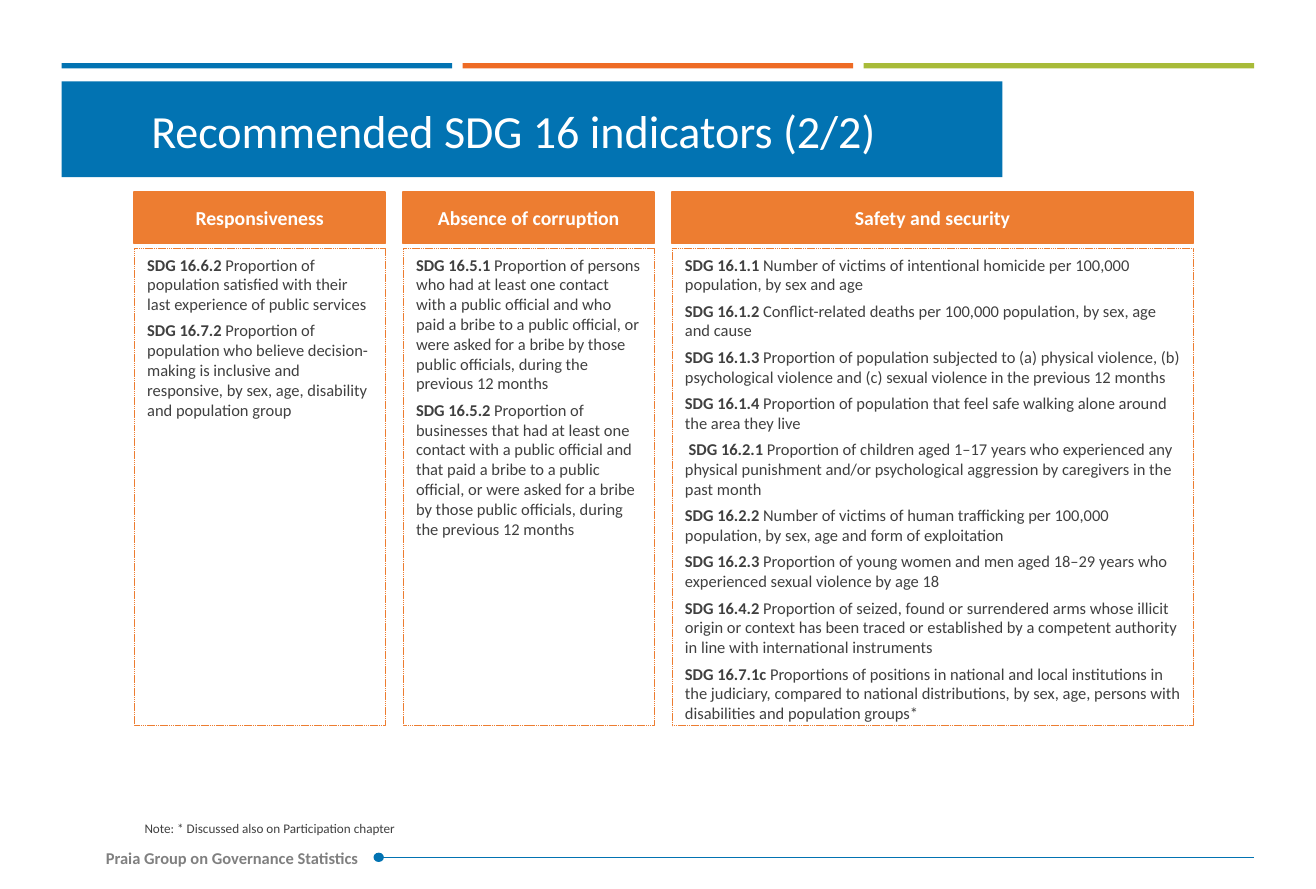
from dataclasses import dataclass

from lxml import etree
from pptx import Presentation
from pptx.dml.color import RGBColor
from pptx.enum import dml, shapes, text
from pptx.oxml import ns
from pptx.util import Cm, Pt


@dataclass(frozen=True)
class Theme:
    font: str = "Calibri"
    blue: str = "0273B2"
    red_orange: str = "EE6B25"
    green: str = "A8BB39"
    orange: str = "ED7D31"
    white: str = "FFFFFF"
    ink: str = "404040"
    grey: str = "808080"
    title_size: float = 25.2
    heading_size: float = 10.8
    body_size: float = 9
    note_size: float = 7.2


class SlideBuilder:
    """Holds the theme and the current slide."""

    def __init__(self, slide, theme):
        self.slide = slide
        self.theme = theme

    def place(self, shape, left, top, width, height):
        shape.left, shape.top = Cm(left), Cm(top)
        shape.width, shape.height = Cm(width), Cm(height)

    def prepare(self, shape, anchor=text.MSO_ANCHOR.TOP):
        frame = shape.text_frame
        frame.word_wrap = True
        frame.auto_size = text.MSO_AUTO_SIZE.NONE
        frame.vertical_anchor = anchor
        frame.margin_left = frame.margin_right = Cm(0.25)
        frame.margin_top = frame.margin_bottom = Cm(0.13)
        return frame

    def style(self, run, size, color, bold=False):
        run.font.name = self.theme.font
        run.font.size = Pt(size)
        run.font.bold = bold
        run.font.color.rgb = RGBColor.from_string(color)

    def set_wording(self, shape, wording, size, color, bold=False,
                    align=text.PP_ALIGN.LEFT, anchor=text.MSO_ANCHOR.TOP):
        frame = self.prepare(shape, anchor)
        frame.text = wording
        paragraph = frame.paragraphs[0]
        paragraph.alignment = align
        self.style(paragraph.runs[0], size, color, bold)
        return paragraph

    def block(self, left, top, width, height, color,
              kind=shapes.MSO_SHAPE.RECTANGLE):
        block = self.slide.shapes.add_shape(
            kind, Cm(left), Cm(top), Cm(width), Cm(height))
        block.shadow.inherit = False
        block.fill.solid()
        block.fill.fore_color.rgb = RGBColor.from_string(color)
        block.line.fill.background()
        return block

    def title(self, wording, box):
        title = self.slide.shapes.title
        self.place(title, *box)
        paragraph = self.set_wording(title, wording, self.theme.title_size, self.theme.white)
        paragraph.line_spacing = 0.9
        return title

    def heading(self, wording, *box):
        heading = self.block(*box, self.theme.orange)
        heading.line.color.rgb = RGBColor.from_string(self.theme.orange)
        heading.line.width = Pt(1)
        self.set_wording(heading, wording, self.theme.heading_size, self.theme.white, True,
                         text.PP_ALIGN.CENTER, text.MSO_ANCHOR.MIDDLE)

    def indicators(self, body, entries, *box):
        self.place(body, *box)
        body.line.color.rgb = RGBColor.from_string(self.theme.orange)
        body.line.width = Pt(0.25)
        body.line.dash_style = dml.MSO_LINE.SQUARE_DOT
        frame = self.prepare(body)
        for number, (code, wording) in enumerate(entries):
            paragraph = frame.add_paragraph() if number else frame.paragraphs[0]
            properties = paragraph._p.get_or_add_pPr()
            properties.set("marL", "0")
            properties.set("indent", "0")
            etree.SubElement(properties, ns.qn("a:buNone"))
            paragraph.alignment = text.PP_ALIGN.LEFT
            paragraph.line_spacing = 1.0
            paragraph.space_before = Pt(0)
            paragraph.space_after = Pt(3.6)
            paragraph.text = code + " "
            paragraph.add_run().text = wording
            for run, bold in zip(paragraph.runs, (True, False)):
                self.style(run, self.theme.body_size, self.theme.ink, bold)

    def label(self, wording, box, size, color, **options):
        label = self.slide.shapes.add_textbox(*map(Cm, box))
        self.set_wording(label, wording, size, color, **options)

    def rule(self, left, right, y, color):
        rule = self.slide.shapes.add_connector(
            shapes.MSO_CONNECTOR.STRAIGHT, Cm(left), Cm(y), Cm(right), Cm(y))
        rule.line.color.rgb = RGBColor.from_string(color)
        rule.line.width = Pt(0.5)
        etree.SubElement(rule._element.spPr, ns.qn("a:effectLst"))


COLUMNS = [
    ("Responsiveness", 4.85, [
        ("SDG 16.6.2", "Proportion of population satisfied with their last experience of public services"),
        ("SDG 16.7.2", "Proportion of population who believe decision-making is inclusive and "
                       "responsive, by sex, age, disability and population group"),
    ]),
    ("Absence of corruption", 4.85, [
        ("SDG 16.5.1", "Proportion of persons who had at least one contact with a public official "
                       "and who paid a bribe to a public official, or were asked for a bribe by "
                       "those public officials, during the previous 12 months"),
        ("SDG 16.5.2", "Proportion of businesses that had at least one contact with a public "
                       "official and that paid a bribe to a public official, or were asked for a "
                       "bribe by those public officials, during the previous 12 months"),
    ]),
    ("Safety and security", 10.06, [
        ("SDG 16.1.1", "Number of victims of intentional homicide per 100,000 population, by sex and age"),
        ("SDG 16.1.2", "Conflict-related deaths per 100,000 population, by sex, age and cause"),
        ("SDG 16.1.3", "Proportion of population subjected to (a) physical violence, (b) "
                       "psychological violence and (c) sexual violence in the previous 12 months"),
        ("SDG 16.1.4", "Proportion of population that feel safe walking alone around the area they live"),
        (" SDG 16.2.1", "Proportion of children aged 1–17 years who experienced any physical "
                        "punishment and/or psychological aggression by caregivers in the past month"),
        ("SDG 16.2.2", "Number of victims of human trafficking per 100,000 population, by sex, "
                       "age and form of exploitation"),
        ("SDG 16.2.3", "Proportion of young women and men aged 18–29 years who experienced "
                       "sexual violence by age 18"),
        ("SDG 16.4.2", "Proportion of seized, found or surrendered arms whose illicit origin or "
                       "context has been traced or established by a competent authority in line "
                       "with international instruments"),
        ("SDG 16.7.1c", "Proportions of positions in national and local institutions in the "
                        "judiciary, compared to national distributions, by sex, age, persons with "
                        "disabilities and population groups*"),
    ]),
]


def main():
    theme = Theme()
    deck = Presentation()
    deck.slide_width, deck.slide_height = Cm(25.4), Cm(17.15)
    comparison = deck.slide_layouts.get_by_name("Comparison")
    slide = deck.slides.add_slide(comparison)
    builder = SlideBuilder(slide, theme)

    # Title on its banner, under three coloured bars
    title = builder.title("Recommended SDG 16 indicators (2/2)", (2.67, 1.96, 15.93, 1.42))
    banner = builder.block(1.19, 1.57, 18.16, 1.85, theme.blue)
    title.element.addprevious(banner.element)
    for position, color in enumerate((theme.blue, theme.red_orange, theme.green)):
        builder.block(1.19 + position * 7.74, 1.22, 7.54, 0.1, color)

    # Indicator columns, one body placeholder each
    *bodies, spare = list(slide.placeholders)[1:]
    spare.element.getparent().remove(spare.element)
    left, gap = 2.59, 0.34
    for body, (topic, width, entries) in zip(bodies, COLUMNS):
        builder.heading(topic, left, 3.71, width, 0.99)
        builder.indicators(body, entries, left, 4.78, width, 9.22)
        left += width + gap

    # Note and footer
    builder.label("Note: * Discussed also on Participation chapter", (2.54, 15.65, 20.47, 0.64),
                  theme.note_size, theme.ink, anchor=text.MSO_ANCHOR.MIDDLE)
    builder.label("Praia Group on Governance Statistics", (0.91, 16.23, 6.25, 0.64),
                  theme.body_size, theme.grey, bold=True, align=text.PP_ALIGN.RIGHT)
    builder.rule(7.32, 24.2, 16.54, theme.blue)
    builder.block(7.21, 16.45, 0.2, 0.18, theme.blue, shapes.MSO_SHAPE.OVAL)

    deck.save("out.pptx")


if __name__ == "__main__":
    main()
